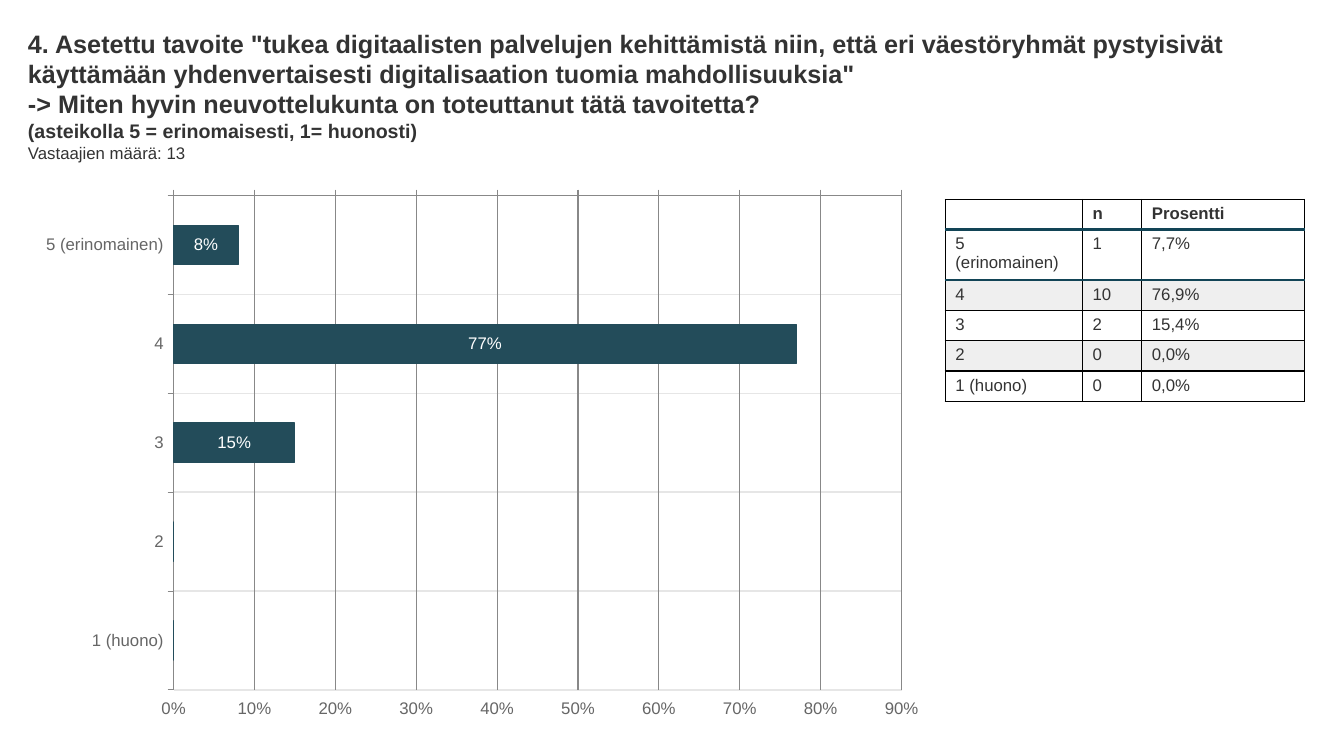
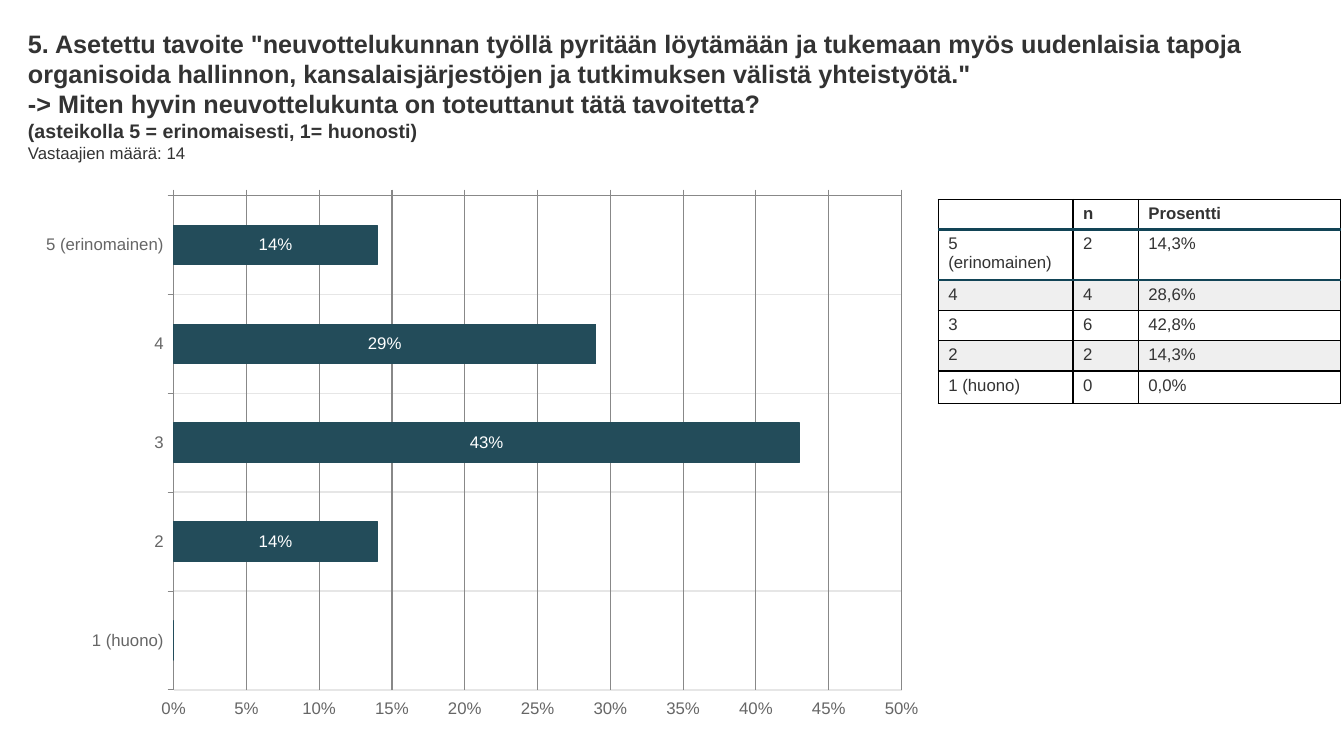
from dataclasses import dataclass

from lxml.etree import SubElement
from pptx import Presentation
from pptx.chart.data import CategoryChartData
from pptx.dml.color import RGBColor
from pptx.enum.chart import XL_CHART_TYPE, XL_LABEL_POSITION, XL_TICK_LABEL_POSITION, XL_TICK_MARK
from pptx.oxml.ns import qn
from pptx.util import Pt


@dataclass(frozen=True)
class Theme:
    font: str = "Arial"
    text: str = "333333"
    axis_text: str = "666666"
    axis_line: str = "888888"
    row_line: str = "E6E6E6"
    bar: str = "234C5A"
    label: str = "FFFFFF"
    band: str = "EFEFEF"
    border: str = "000000"
    accent: str = "124456"
    title_size: float = 18
    scale_size: float = 14
    body_size: float = 12


@dataclass(frozen=True)
class Frame:
    left: float
    top: float
    width: float
    height: float

    def lengths(self) -> tuple:
        return Pt(self.left), Pt(self.top), Pt(self.width), Pt(self.height)


@dataclass(frozen=True)
class TextLine:
    text: str
    size: float
    bold: bool = False


@dataclass(frozen=True)
class Answer:
    label: str
    count: int
    percent: float

    def cells(self) -> tuple[str, str, str]:
        return self.label, str(self.count), f"{self.percent:.1f}%".replace(".", ",")


@dataclass(frozen=True)
class Question:
    title: str
    answers: list[Answer]
    axis_maximum: float
    axis_step: float
    table_left: float
    column_widths: tuple[float, float, float]
    last_row_height: float


THEME = Theme()
TITLE_FRAME = Frame(20, 20, 920, 82)
RESPONDENTS_FRAME = Frame(20, 102, 920, 14.4)
CHART_FRAME = Frame(20, 132, 650, 388)
PLOT_LAYOUT = {"x": 0.16, "y": 0.02, "w": 0.8, "h": 0.91}
TABLE_TOP = 142.4
ROW_HEIGHT = 21.6
TWO_LINE_ROW_HEIGHT = 35.8
HEADINGS = ("", "n", "Prosentti")
FOLLOW_UP = "-> Miten hyvin neuvottelukunta on toteuttanut tätä tavoitetta?"
SCALE = "(asteikolla 5 = erinomaisesti, 1= huonosti)"
LABELS = ("5 (erinomainen)", "4", "3", "2", "1 (huono)")


def make_answers(counts: list[int], percents: list[float]) -> list[Answer]:
    return [Answer(*row) for row in zip(LABELS, counts, percents)]


QUESTIONS = [
    Question(
        '4. Asetettu tavoite "tukea digitaalisten palvelujen kehittämistä niin, että eri '
        "väestöryhmät pystyisivät käyttämään yhdenvertaisesti digitalisaation tuomia "
        'mahdollisuuksia"',
        make_answers([1, 10, 2, 0, 0], [7.7, 76.9, 15.4, 0, 0]),
        0.9, 0.1, 675.2, (98, 42.4, 116), ROW_HEIGHT,
    ),
    Question(
        '5. Asetettu tavoite "neuvottelukunnan työllä pyritään löytämään ja tukemaan myös '
        "uudenlaisia tapoja organisoida hallinnon, kansalaisjärjestöjen ja tutkimuksen "
        'välistä yhteistyötä."',
        make_answers([2, 4, 6, 2, 0], [14.3, 28.6, 42.8, 14.3, 0]),
        0.5, 0.05, 670.2, (96.3, 46.6, 144.6), 23.2,
    ),
]


def style_font(font, size: float, color: str, bold: bool = False) -> None:
    font.name = THEME.font
    font.size = Pt(size)
    font.bold = bold
    font.color.rgb = RGBColor.from_string(color)


def style_line(line, color: str, width: float) -> None:
    line.color.rgb = RGBColor.from_string(color)
    line.width = Pt(width)


def add_text(page, frame: Frame, lines: list[TextLine]) -> None:
    text_frame = page.shapes.add_textbox(*frame.lengths()).text_frame
    text_frame.word_wrap = True
    text_frame.margin_left = text_frame.margin_right = 0
    text_frame.margin_top = text_frame.margin_bottom = 0
    for index, line in enumerate(lines):
        para = text_frame.add_paragraph() if index else text_frame.paragraphs[0]
        para.text = line.text
        style_font(para.font, line.size, THEME.text, line.bold)


def fix_plot_area(chart) -> None:
    """Place the inside of the plot by fractions of the chart frame."""
    plot_area = chart._chartSpace.chart.plotArea
    for old in plot_area.findall(qn("c:layout")):
        plot_area.remove(old)
    layout = SubElement(plot_area, qn("c:layout"))
    plot_area.insert(0, layout)
    manual = SubElement(layout, qn("c:manualLayout"))
    SubElement(manual, qn("c:layoutTarget"), val="inner")
    for side in ("x", "y"):
        SubElement(manual, qn(f"c:{side}Mode"), val="edge")
    for side, fraction in PLOT_LAYOUT.items():
        SubElement(manual, qn(f"c:{side}"), val=str(fraction))


def style_axis(axis, label_position, grid_color: str, grid_width: float) -> None:
    axis.tick_label_position = label_position
    axis.major_tick_mark = XL_TICK_MARK.OUTSIDE
    axis.minor_tick_mark = XL_TICK_MARK.NONE
    axis.has_major_gridlines = True
    style_font(axis.tick_labels.font, THEME.body_size, THEME.axis_text)
    style_line(axis.format.line, THEME.axis_line, 0.75)
    style_line(axis.major_gridlines.format.line, grid_color, grid_width)


def add_bar_chart(page, question: Question) -> None:
    data = CategoryChartData(number_format="0%")
    data.categories = [answer.label for answer in question.answers]
    data.add_series("Series 1", [round(answer.percent) / 100 for answer in question.answers])
    chart = page.shapes.add_chart(
        XL_CHART_TYPE.BAR_CLUSTERED, *CHART_FRAME.lengths(), data
    ).chart
    chart.has_legend = False
    chart.has_title = False
    style_font(chart.font, THEME.body_size, THEME.axis_text)
    fix_plot_area(chart)

    chart.category_axis.reverse_order = True
    style_axis(chart.category_axis, XL_TICK_LABEL_POSITION.LOW, THEME.row_line, 1)
    value_axis = chart.value_axis
    style_axis(value_axis, XL_TICK_LABEL_POSITION.HIGH, THEME.axis_line, 0.75)
    value_axis.minimum_scale = 0
    value_axis.maximum_scale = question.axis_maximum
    value_axis.major_unit = question.axis_step
    value_axis.tick_labels.number_format = "0%"
    value_axis.tick_labels.number_format_is_linked = False

    plot = chart.plots[0]
    plot.gap_width = 150
    plot.vary_by_categories = False
    series = plot.series[0]
    series.format.fill.solid()
    series.format.fill.fore_color.rgb = RGBColor.from_string(THEME.bar)
    style_line(series.format.line, THEME.bar, 0.75)
    labels = series.data_labels
    labels.show_value = True
    labels.number_format = "0%;;"
    labels.number_format_is_linked = False
    labels.position = XL_LABEL_POSITION.CENTER
    style_font(labels.font, THEME.body_size, THEME.label)


def set_border(cell, side: str, color: str, width: float) -> None:
    properties = cell._tc.get_or_add_tcPr()
    line = SubElement(properties, qn(f"a:ln{side}"), w=str(Pt(width)))
    fill = SubElement(line, qn("a:solidFill"))
    SubElement(fill, qn("a:srgbClr"), val=color)


def fill_cell(cell, text: str, row: int) -> None:
    para = cell.text_frame.paragraphs[0]
    para.text = text
    style_font(para.font, THEME.body_size, THEME.text, bold=row == 0)
    if not text:
        SubElement(para._p, qn("a:endParaRPr"), sz=str(int(THEME.body_size * 100)))
    accent_sides = {0: "B", 1: "TB", 2: "T"}.get(row, "")
    for side in "LRTB":
        if side in accent_sides:
            set_border(cell, side, THEME.accent, 2)
        else:
            set_border(cell, side, THEME.border, 1)
    if row and row % 2 == 0:
        cell.fill.solid()
        cell.fill.fore_color.rgb = RGBColor.from_string(THEME.band)
    else:
        cell.fill.background()


def add_answer_table(page, question: Question) -> None:
    rows = [HEADINGS, *(answer.cells() for answer in question.answers)]
    heights = [ROW_HEIGHT] * len(rows)
    heights[1] = TWO_LINE_ROW_HEIGHT
    heights[-1] = question.last_row_height
    frame = Frame(question.table_left, TABLE_TOP, sum(question.column_widths), sum(heights))
    table = page.shapes.add_table(len(rows), len(HEADINGS), *frame.lengths()).table
    table.first_row = table.horz_banding = False
    for column, width in zip(table.columns, question.column_widths):
        column.width = Pt(width)
    for row, (texts, height) in enumerate(zip(rows, heights)):
        table.rows[row].height = Pt(height)
        for column, text in enumerate(texts):
            fill_cell(table.cell(row, column), text, row)


def add_question_page(deck, question: Question) -> None:
    page = deck.slides.add_slide(deck.slide_layouts[6])
    respondents = sum(answer.count for answer in question.answers)
    add_text(page, TITLE_FRAME, [
        TextLine(question.title, THEME.title_size, True),
        TextLine(FOLLOW_UP, THEME.title_size, True),
        TextLine(SCALE, THEME.scale_size, True),
    ])
    add_text(page, RESPONDENTS_FRAME,
             [TextLine(f"Vastaajien määrä: {respondents}", THEME.body_size)])
    add_bar_chart(page, question)
    add_answer_table(page, question)


def main() -> None:
    deck = Presentation()
    deck.slide_width, deck.slide_height = Pt(960), Pt(540)
    for question in QUESTIONS:
        add_question_page(deck, question)
    deck.save("out.pptx")


if __name__ == "__main__":
    main()
